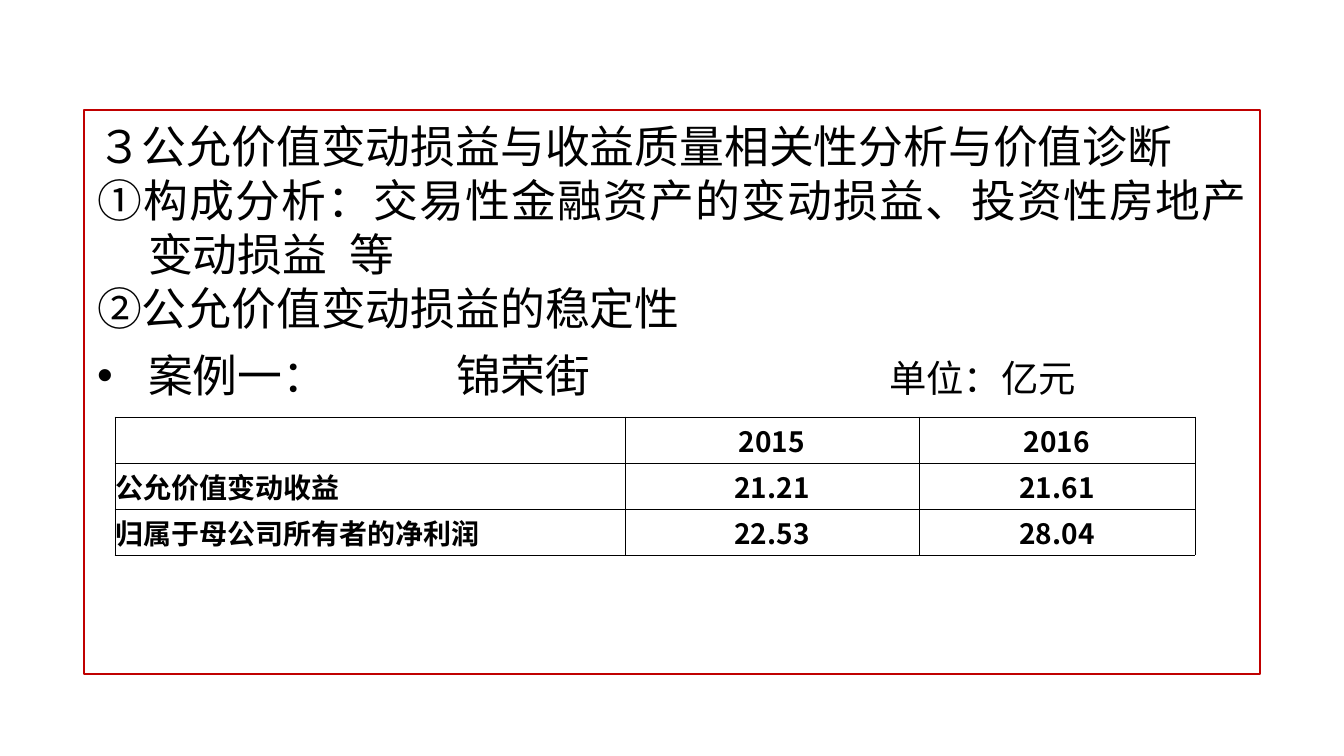
from dataclasses import dataclass

from pptx import Presentation
from pptx.dml.color import RGBColor
from pptx.enum.text import MSO_ANCHOR, MSO_AUTO_SIZE, PP_ALIGN
from pptx.oxml.ns import qn
from pptx.util import Emu, Pt
from lxml import etree

LEFT, CENTER, JUSTIFY = PP_ALIGN.LEFT, PP_ALIGN.CENTER, PP_ALIGN.JUSTIFY
MIDDLE, TOP = MSO_ANCHOR.MIDDLE, MSO_ANCHOR.TOP
NO_FIT = MSO_AUTO_SIZE.NONE


@dataclass
class Theme:
    ink: RGBColor = RGBColor(0, 0, 0)
    frame: RGBColor = RGBColor(0xC0, 0, 0)
    paper: RGBColor = RGBColor(255, 255, 255)
    body: int = 24
    unit: int = 20
    cell: int = 15
    cjk: str = "Noto Sans CJK SC"


theme = Theme()


def px(n):
    return Emu(round(n * 914400 / 134.4))


def style(run, name, size, bold=False):
    """Set the Latin and East Asian fonts of a run."""
    font = run.font
    font.name, font.size, font.bold = name, Pt(size), bold
    font.color.rgb = theme.ink
    east = etree.Element(qn("a:ea"), typeface=theme.cjk)
    run._r.rPr.find(qn("a:latin")).addnext(east)


deck = Presentation()
deck.slide_width, deck.slide_height = px(1344), px(756)
slide = deck.slides.add_slide(deck.slide_layouts[1])
slide.background.fill.solid()
slide.background.fill.fore_color.rgb = theme.paper
title = slide.shapes.title._element
title.getparent().remove(title)

# Body text
body = slide.placeholders[1]
body.left, body.top, body.width, body.height = px(84), px(110), px(1176), px(564)
body.line.color.rgb = theme.frame
body.line.width = Pt(0.75)
frame = body.text_frame
frame.word_wrap = True
frame.auto_size = NO_FIT
frame.vertical_anchor = TOP
frame.margin_left = frame.margin_right = px(13)
frame.margin_top = px(8)

# Text, font, alignment, bullet, tab stops
lines = [
    ("３公允价值变动损益与收益质量相关性分析与价值诊断", "Calibri", JUSTIFY, None, []),
    ("①构成分析：交易性金融资产的变动损益、投资性房地产变动损益\t等",
     "Arial", JUSTIFY, None, [269]),
    ("②公允价值变动损益的稳定性", "Arial", LEFT, None, []),
    ("案例一：\t锦荣街\t单位：亿元", "Arial", LEFT, "•", [359, 792]),
]
for i, (text, name, align, mark, stops) in enumerate(lines):
    para = frame.paragraphs[0] if i == 0 else frame.add_paragraph()
    if mark:
        head, unit = text.rsplit("\t", 1)
        para.text = head + "\t"
        para.add_run().text = unit
    else:
        para.text = text
    props = para._p.get_or_add_pPr()
    props.set("marL", str(px(51)))
    props.set("indent", str(-px(51)))
    if mark:
        etree.SubElement(props, qn("a:buFont"), typeface="Arial")
        etree.SubElement(props, qn("a:buChar"), char=mark)
    else:
        etree.SubElement(props, qn("a:buNone"))
    if stops:
        tabs = etree.SubElement(props, qn("a:tabLst"))
        for stop in stops:
            etree.SubElement(tabs, qn("a:tab"), pos=str(px(stop)), algn="l")
    para.alignment = align
    para.line_spacing = Pt(29)
    para.space_before = Pt(7 if mark else 0)
    for run in para.runs:
        style(run, name, theme.body)
    if mark:
        para.runs[-1].font.size = Pt(theme.unit)

# Table of fair value gains and net profit
rows = [
    ("", "2015", "2016"),
    ("公允价值变动收益", "21.21", "21.61"),
    ("归属于母公司所有者的净利润", "22.53", "28.04"),
]
widths = [510, 294, 276]
high = 46
table = slide.shapes.add_table(
    len(rows), len(widths), px(115), px(417), px(sum(widths)), px(high * len(rows))
).table
table.first_row = table.horz_banding = False
for col, wide in zip(table.columns, widths):
    col.width = px(wide)
for r, row in enumerate(rows):
    table.rows[r].height = px(high)
    for c, text in enumerate(row):
        cell = table.cell(r, c)
        cell.margin_left = cell.margin_right = cell.margin_top = px(1)
        cell.margin_bottom = 0
        cell.vertical_anchor = MIDDLE
        para = cell.text_frame.paragraphs[0]
        para.text = text
        para.alignment = CENTER if c else LEFT
        for run in para.runs:
            style(run, theme.cjk, theme.cell, True)
        props = cell._tc.get_or_add_tcPr()
        for side in ("lnL", "lnR", "lnT", "lnB"):
            edge = etree.SubElement(props, qn("a:" + side), w=str(Pt(0.5)))
            fill = etree.SubElement(edge, qn("a:solidFill"))
            etree.SubElement(fill, qn("a:srgbClr"), val=str(theme.ink))
        cell.fill.background()

deck.save("out.pptx")
